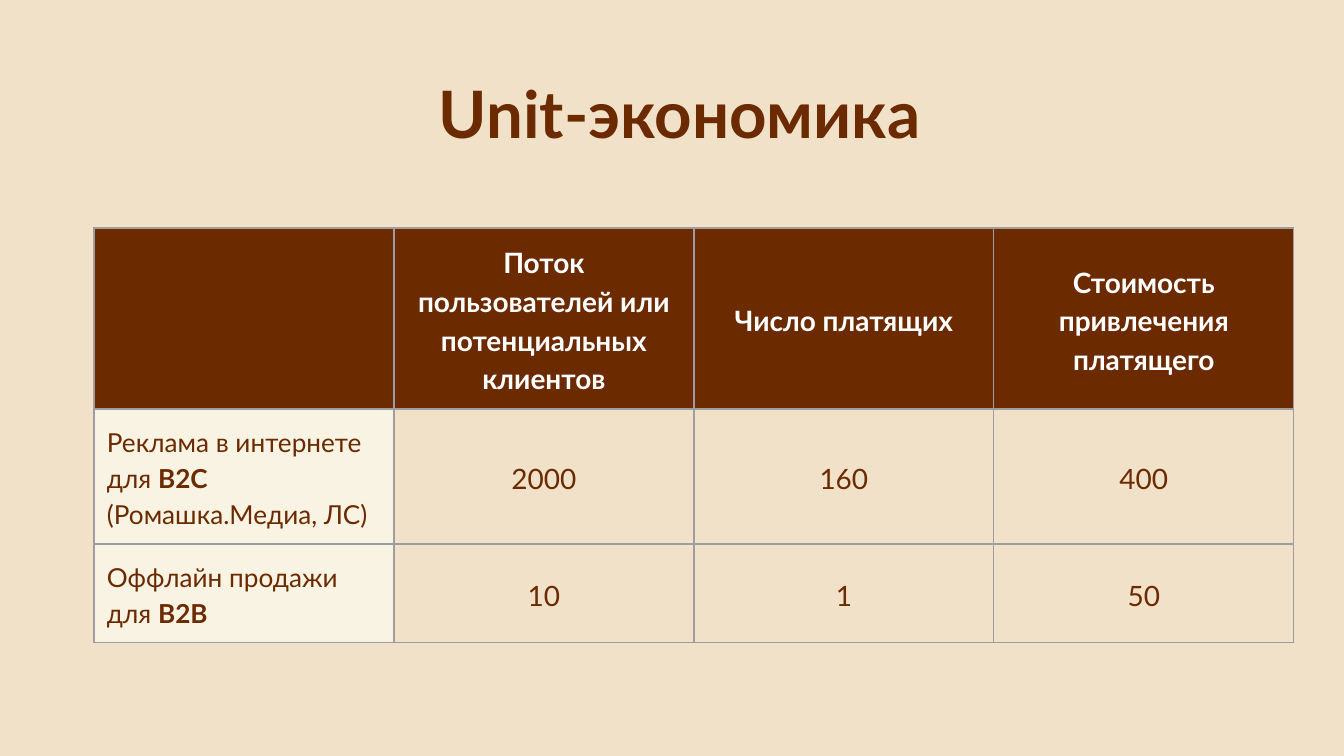
from lxml import etree
from pptx import Presentation
from pptx.dml.color import RGBColor
from pptx.enum.text import MSO_ANCHOR, PP_ALIGN
from pptx.oxml.ns import qn
from pptx.util import Pt

SCALE = 914400 / 134.4
LEFT, CENTER = PP_ALIGN.LEFT, PP_ALIGN.CENTER
TOP, MIDDLE = MSO_ANCHOR.TOP, MSO_ANCHOR.MIDDLE
FONT = "Lato"
COLORS = {
    "sand": "F1E1C9",
    "brown": "6B2A00",
    "cream": "F8F3E3",
    "white": "FFFFFF",
    "grid": "9E9E9E",
}
PAD = 13
WIDTH = 300
HEIGHTS = [181, 135, 99]
HEADS = [
    "Поток пользователей или потенциальных клиентов",
    "Число платящих",
    "Стоимость привлечения платящего",
]
ROWS = [
    ([("Реклама в интернете для ", False), ("B2C ", True),
      ("(Ромашка.Медиа, ЛС)", False)], ["2000", "160", "400"]),
    ([("Оффлайн продажи для ", False), ("В2В", True)], ["10", "1", "50"]),
]


def px(n):
    return round(n * SCALE)


def paint(fill, name):
    fill.solid()
    fill.fore_color.rgb = RGBColor.from_string(COLORS[name])


def write(frame, runs, size, color, align, space=1.0):
    para = frame.paragraphs[0]
    para.alignment = align
    para.line_spacing = space
    for text, bold in runs:
        run = para.add_run()
        run.text = text
        run.font.name = FONT
        run.font.size = Pt(size)
        run.font.bold = bold
        run.font.color.rgb = RGBColor.from_string(COLORS[color])


def pad(item):
    item.margin_left = item.margin_right = px(PAD)
    item.margin_top = item.margin_bottom = px(PAD)


def edge(cell):
    props = cell._tc.get_or_add_tcPr()
    for spot, side in enumerate(["a:lnL", "a:lnR", "a:lnT", "a:lnB"]):
        line = etree.Element(qn(side), w=str(Pt(0.75)))
        fill = etree.SubElement(line, qn("a:solidFill"))
        etree.SubElement(fill, qn("a:srgbClr"), val=COLORS["grid"])
        props.insert(spot, line)


def set_cell(cell, runs, size, color, fill=None, align=CENTER, anchor=MIDDLE):
    pad(cell)
    cell.vertical_anchor = anchor
    if fill:
        paint(cell.fill, fill)
    else:
        cell.fill.background()
    edge(cell)
    write(cell.text_frame, runs, size, color, align, 1.15)


def add_title(slide, text):
    box = slide.shapes.add_textbox(px(56), px(70), px(1248), px(85))
    frame = box.text_frame
    frame.word_wrap = True
    frame.vertical_anchor = MIDDLE
    pad(frame)
    write(frame, [(text, True)], 35, "brown", CENTER)


def add_grid(slide):
    count = len(HEADS) + 1
    frame = slide.shapes.add_table(
        len(HEIGHTS), count, px(94), px(228), px(WIDTH * count), px(sum(HEIGHTS)))
    table = frame.table
    table.first_row = table.horz_banding = False
    for col in table.columns:
        col.width = px(WIDTH)
    for row, height in zip(table.rows, HEIGHTS):
        row.height = px(height)
    set_cell(table.cell(0, 0), [], 15, "white", "brown")
    for col, head in enumerate(HEADS, 1):
        set_cell(table.cell(0, col), [(head, True)], 15, "white", "brown")
    for row, (label, values) in enumerate(ROWS, 1):
        set_cell(table.cell(row, 0), label, 14, "brown", "cream", LEFT, TOP)
        for col, value in enumerate(values, 1):
            set_cell(table.cell(row, col), [(value, False)], 15, "brown")


def main():
    deck = Presentation()
    deck.slide_width, deck.slide_height = px(1344), px(756)
    slide = deck.slides.add_slide(deck.slide_layouts[6])
    paint(slide.background.fill, "sand")
    add_title(slide, "Unit-экономика")
    add_grid(slide)
    deck.save("out.pptx")


if __name__ == "__main__":
    main()
